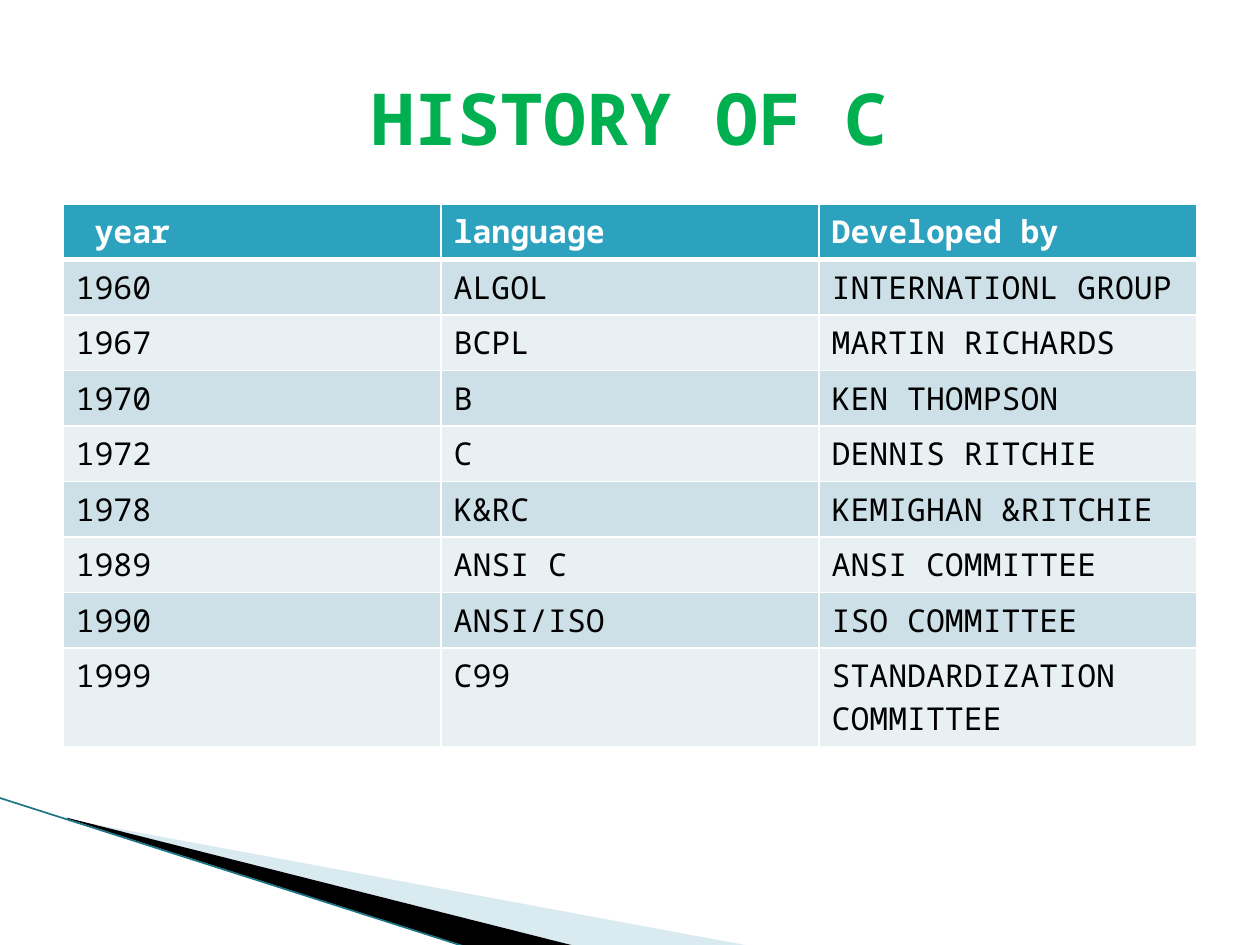
import pptx
import pptx.util
import pptx.dml.color
import pptx.enum.shapes
import pptx.enum.text
import pptx.oxml
import pptx.oxml.ns
from lxml import etree

Pt = pptx.util.Pt
RGBColor = pptx.dml.color.RGBColor
qn = pptx.oxml.ns.qn

FONT = "Noto Sans Mono"
WHITE = RGBColor(0xFF, 0xFF, 0xFF)
BLACK = RGBColor(0x00, 0x00, 0x00)
GREEN = RGBColor(0x00, 0xB0, 0x50)
HEADER = RGBColor(0x2D, 0xA2, 0xBF)
BANDS = [RGBColor(0xCD, 0xE0, 0xE8), RGBColor(0xE8, 0xF0, 0xF4)]
PALE = RGBColor(0xA0, 0xCB, 0xDC)
TEAL = RGBColor(0x1B, 0x75, 0x87)

TITLE = "HISTORY OF C"
ROWS = [
    ("year", "language", "Developed by"),
    ("1960", "ALGOL", "INTERNATIONL GROUP"),
    ("1967", "BCPL", "MARTIN RICHARDS"),
    ("1970", "B", "KEN THOMPSON"),
    ("1972", "C", "DENNIS RITCHIE"),
    ("1978", "K&RC", "KEMIGHAN &RITCHIE"),
    ("1989", "ANSI C", "ANSI COMMITTEE"),
    ("1990", "ANSI/ISO", "ISO COMMITTEE"),
    ("1999", "C99", "STANDARDIZATION COMMITTEE"),
]
WEDGES = [
    ([(39.6, 468.4), (428.4, 540.5), (328.5, 540.5), (39.6, 468)], PALE, 40),
    ([(38.2, 467.3), (329, 540.7), (267.8, 541.4), (38.9, 468)], BLACK, 100),
]
EDGE = (-0.7, 455.8, 267.1, 541.4)
LEFT, WIDTH = 36, 648
TABLE_TOP, ROW_HEIGHT = 116.6, 29.5


def write(tf, text, size=18, color=BLACK, bold=False, align=None):
    p = tf.paragraphs[0]
    p.alignment = align
    r = p.add_run()
    r.text = text
    r.font.name = FONT
    r.font.size = Pt(size)
    r.font.bold = bold
    r.font.color.rgb = color


def add_wedge(s, points, color, opacity):
    corners = [(Pt(x), Pt(y)) for x, y in points]
    builder = s.shapes.build_freeform(*corners[0])
    builder.add_line_segments(corners[1:], close=True)
    sp = builder.convert_to_shape()
    sp.shadow.inherit = False
    sp.fill.solid()
    sp.fill.fore_color.rgb = color
    sp.line.fill.background()
    if opacity < 100:
        clr = sp._element.spPr.find(qn("a:solidFill"))[0]
        etree.SubElement(clr, qn("a:alpha"), val=str(opacity * 1000))


def set_borders(cell, widths):
    tcPr = cell._tc.get_or_add_tcPr()
    for i, (side, width) in enumerate(widths.items()):
        ln = etree.Element(qn(f"a:ln{side}"), w=str(Pt(width)))
        fill = etree.SubElement(ln, qn("a:solidFill"))
        etree.SubElement(fill, qn("a:srgbClr"), val=str(WHITE))
        tcPr.insert(i, ln)


def add_history(s):
    count, cols = len(ROWS), len(ROWS[0])
    table = s.shapes.add_table(count, cols, Pt(LEFT), Pt(TABLE_TOP),
                               Pt(WIDTH), Pt(ROW_HEIGHT * count)).table
    for column in table.columns:
        column.width = Pt(WIDTH / cols)
    for i, row in enumerate(ROWS):
        header = i == 0
        table.rows[i].height = Pt(ROW_HEIGHT)
        for j, text in enumerate(row):
            cell = table.cell(i, j)
            cell.fill.solid()
            cell.fill.fore_color.rgb = HEADER if header else BANDS[(i - 1) % 2]
            set_borders(cell, {"L": 1, "R": 1, "T": 3 if i == 1 else 1,
                               "B": 3 if header else 1})
            write(cell.text_frame, text, color=WHITE if header else BLACK, bold=header)
    table.cell(0, 0).margin_left = Pt(18)


def main():
    prs = pptx.Presentation()
    prs.slide_width, prs.slide_height = Pt(720), Pt(540)
    s = prs.slides.add_slide(prs.slide_layouts[6])
    for points, color, opacity in WEDGES:
        add_wedge(s, points, color, opacity)
    edge = s.shapes.add_connector(pptx.enum.shapes.MSO_CONNECTOR.STRAIGHT,
                                  *(Pt(v) for v in EDGE))
    edge.line.color.rgb = TEAL
    edge.line.width = Pt(0.95)
    etree.SubElement(edge._element.spPr, qn("a:effectLst"))
    add_history(s)
    tf = s.shapes.add_textbox(Pt(LEFT), Pt(21.6), Pt(WIDTH), Pt(90)).text_frame
    tf.word_wrap = True
    tf.vertical_anchor = pptx.enum.text.MSO_ANCHOR.MIDDLE
    write(tf, TITLE, size=41, color=GREEN, bold=True,
          align=pptx.enum.text.PP_ALIGN.CENTER)
    prs.save("out.pptx")


if __name__ == "__main__":
    main()
